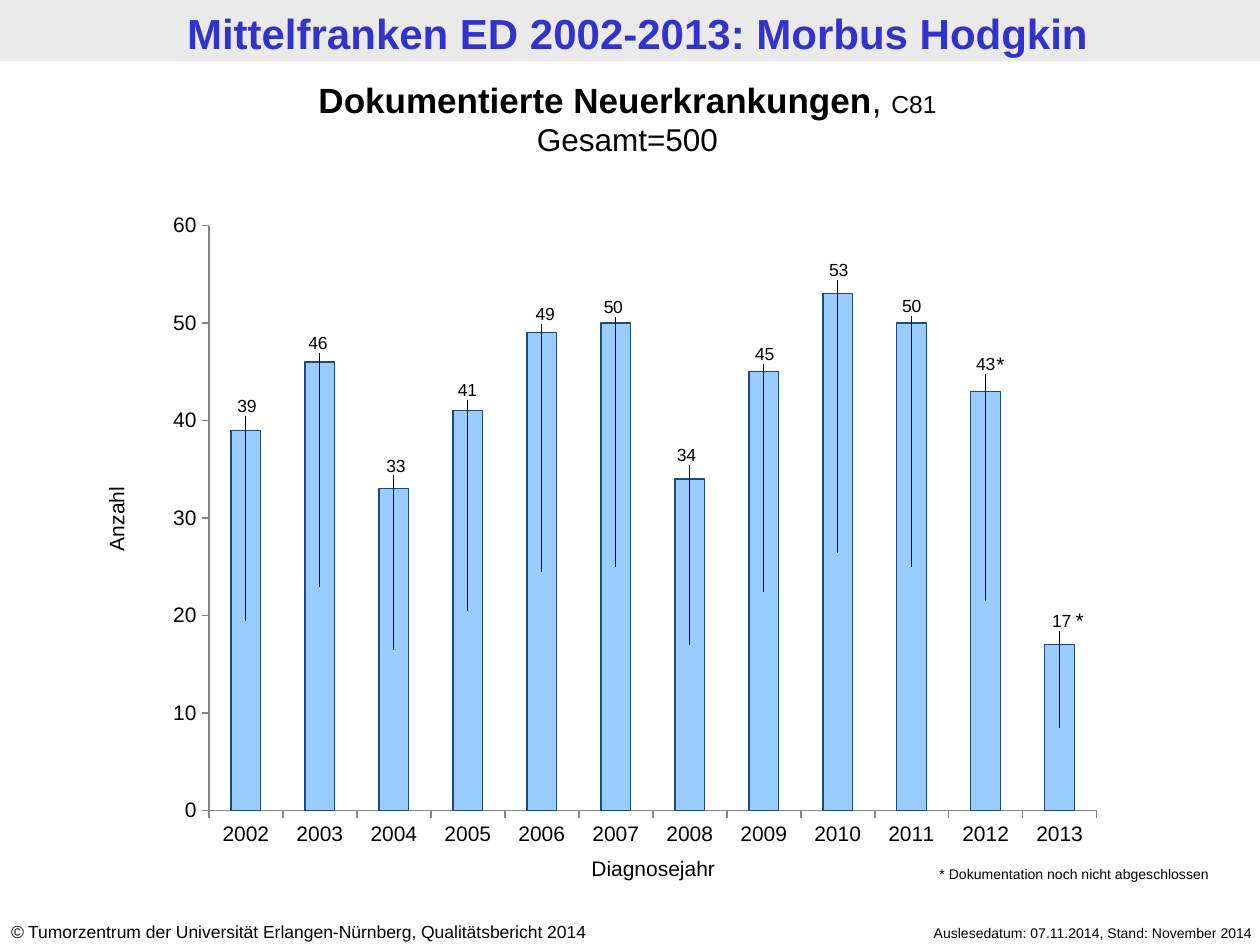
from dataclasses import dataclass

from lxml.etree import SubElement
from pptx import Presentation
from pptx.chart.data import CategoryChartData
from pptx.dml.color import RGBColor
from pptx.enum.chart import XL_CHART_TYPE as ChartType
from pptx.enum.chart import XL_LABEL_POSITION as LabelPosition
from pptx.enum.chart import XL_TICK_MARK as TickMark
from pptx.enum.shapes import MSO_SHAPE as Shape
from pptx.enum.text import MSO_ANCHOR as Anchor
from pptx.enum.text import MSO_AUTO_SIZE as AutoSize
from pptx.enum.text import PP_ALIGN as Align
from pptx.oxml import parse_xml
from pptx.oxml.ns import nsdecls, qn
from pptx.util import Cm, Pt

FONT = "Arial"
COLORS = {
    "band": "EAEAEA",
    "title": "3333CC",
    "text": "000000",
    "bar": "99CCFF",
    "bar_line": "1F497D",
    "axis": "868686",
}


@dataclass
class Caption:
    text: str
    left: float
    top: float
    width: float
    height: float
    size: float
    align: Align = Align.LEFT
    rotation: float = 0


@dataclass
class YearCount:
    year: int
    count: int
    label_shift: float  # cm to the right of the bar centre
    label_lift: float  # cm above the bar top


CAPTIONS = [
    Caption("Auslesedatum: 07.11.2014, Stand: November 2014",
            16.89, 18.52, 8.61, 0.61, 8, Align.RIGHT),
    Caption("Diagnosejahr", 10.31, 17.12, 5.72, 0.76, 12, Align.CENTER),
    Caption("Anzahl", 0.79, 10.08, 3.1, 0.76, 12, Align.CENTER, 270),
    Caption("*", 19.51, 6.96, 0.99, 0.76, 12, Align.RIGHT),
    Caption("*", 21.11, 12.12, 0.99, 0.76, 12, Align.RIGHT),
    Caption("* Dokumentation noch nicht abgeschlossen",
            18.69, 17.32, 6.3, 0.61, 8),
]
COPYRIGHT = Caption("©", -0.03, 18.44, 13.31, 0.69, 10)
HEADING = Caption("Dokumentierte Neuerkrankungen\nGesamt=500",
                  -0.1, 1.45, 25.5, 1.88, 20, Align.CENTER)

YEAR_COUNTS = [
    YearCount(2002, 39, 0.02, 0.48),
    YearCount(2003, 46, -0.04, 0.38),
    YearCount(2004, 33, 0.04, 0.46),
    YearCount(2005, 41, -0.01, 0.4),
    YearCount(2006, 49, 0.07, 0.36),
    YearCount(2007, 50, -0.05, 0.32),
    YearCount(2008, 34, -0.07, 0.48),
    YearCount(2009, 45, 0.02, 0.34),
    YearCount(2010, 53, 0.02, 0.46),
    YearCount(2011, 50, 0, 0.34),
    YearCount(2012, 43, 0, 0.54),
    YearCount(2013, 17, 0.04, 0.46),
]
CHART_WIDTH, CHART_HEIGHT = 19.58, 13.06
PLOT = {"x": 0.066, "y": 0.029, "w": 0.914, "h": 0.903}
AXIS_MAX = 60


def color(name: str) -> RGBColor:
    return RGBColor.from_string(COLORS[name])


def style_font(font, size: float, name: str = "text", bold: bool = False) -> None:
    font.name = FONT
    font.size = Pt(size)
    font.bold = bold
    font.color.rgb = color(name)


def add_caption(slide, caption: Caption):
    box = slide.shapes.add_textbox(Cm(caption.left), Cm(caption.top),
                                   Cm(caption.width), Cm(caption.height))
    box.rotation = caption.rotation
    frame = box.text_frame
    frame.word_wrap = True
    frame.auto_size = AutoSize.SHAPE_TO_FIT_TEXT
    frame.text = caption.text
    for paragraph in frame.paragraphs:
        paragraph.alignment = caption.align
        style_font(paragraph.runs[0].font, caption.size)
    return frame


def append_run(paragraph, text: str, size: float) -> None:
    run = paragraph.add_run()
    run.text = text
    style_font(run.font, size)


def manual_layout(values: dict[str, float], inner: bool = False):
    layout = parse_xml(f"<c:layout {nsdecls('c')}><c:manualLayout/></c:layout>")
    if inner:
        SubElement(layout[0], qn("c:layoutTarget"), val="inner")
        for side in ("xMode", "yMode"):
            SubElement(layout[0], qn(f"c:{side}"), val="edge")
    for key, value in values.items():
        SubElement(layout[0], qn(f"c:{key}"), val=f"{value:.4f}")
    return layout


def add_case_chart(slide) -> None:
    data = CategoryChartData()
    data.categories = [str(entry.year) for entry in YEAR_COUNTS]
    data.add_series("Series 1", [entry.count for entry in YEAR_COUNTS])
    chart = slide.shapes.add_chart(ChartType.COLUMN_STACKED, Cm(2.92), Cm(4.17),
                                   Cm(CHART_WIDTH), Cm(CHART_HEIGHT), data).chart
    chart.has_legend = False
    chart.has_title = False
    style_font(chart.font, 12)

    # Axes
    for axis in (chart.category_axis, chart.value_axis):
        axis.has_major_gridlines = False
        axis.major_tick_mark = TickMark.OUTSIDE
        axis.minor_tick_mark = TickMark.NONE
        axis.format.line.color.rgb = color("axis")
        axis.format.line.width = Pt(1)
    chart.value_axis.minimum_scale = 0
    chart.value_axis.maximum_scale = AXIS_MAX
    chart.value_axis.major_unit = 10

    # Bars
    plot = chart.plots[0]
    plot.gap_width = 150
    plot.overlap = 100
    plot.vary_by_categories = False
    bars = plot.series[0]
    bars.format.fill.solid()
    bars.format.fill.fore_color.rgb = color("bar")
    bars.format.line.color.rgb = color("bar_line")
    bars.format.line.width = Pt(0.75)

    # Value labels, moved from the bar centre to just above the bar
    bars.data_labels.show_value = True
    style_font(bars.data_labels.font, 10)
    for index, entry in enumerate(YEAR_COUNTS):
        label = bars.points[index].data_label
        label.position = LabelPosition.CENTER
        style_font(label.font, 10)
        half_bar = entry.count / AXIS_MAX * PLOT["h"] / 2
        offset = {"x": entry.label_shift / CHART_WIDTH,
                  "y": -half_bar - entry.label_lift / CHART_HEIGHT}
        label_xml = bars._element.xpath(f"c:dLbls/c:dLbl[c:idx/@val='{index}']")[0]
        label_xml.insert(1, manual_layout(offset))

    # Plot area
    plot_area = chart._chartSpace.xpath("c:chart/c:plotArea")[0]
    for old_layout in plot_area.xpath("c:layout"):
        plot_area.remove(old_layout)
    plot_area.insert(0, manual_layout(PLOT, inner=True))


def main() -> None:
    presentation = Presentation()
    presentation.slide_width, presentation.slide_height = Cm(25.4), Cm(19.05)
    slide = presentation.slides.add_slide(presentation.slide_layouts[5])

    # Title on its band
    band = slide.shapes.add_shape(Shape.RECTANGLE, 0, 0, Cm(25.4), Cm(1.24))
    band.shadow.inherit = False
    band.fill.solid()
    band.fill.fore_color.rgb = color("band")
    band.line.fill.background()
    title = slide.shapes.title
    title._element.addprevious(band._element)
    title.left, title.top = Cm(0.15), Cm(0.03)
    title.width, title.height = Cm(25.4), Cm(1.24)
    title_frame = title.text_frame
    title_frame.text = "Mittelfranken ED 2002-2013: Morbus Hodgkin"
    title_frame.vertical_anchor = Anchor.TOP
    title_frame.auto_size = AutoSize.NONE
    title_frame.paragraphs[0].alignment = Align.CENTER
    style_font(title_frame.paragraphs[0].runs[0].font, 24, "title", bold=True)

    add_case_chart(slide)

    # Heading with the total
    topic, total = add_caption(slide, HEADING).paragraphs
    topic.runs[0].font.bold = True
    append_run(topic, ", ", 20)
    append_run(topic, "C81", 14)
    total.runs[0].font.size = Pt(18)

    # Axis names, notes and footer
    for caption in CAPTIONS:
        add_caption(slide, caption)
    copyright_line = add_caption(slide, COPYRIGHT).paragraphs[0]
    copyright_line.runs[0].font.italic = True
    append_run(copyright_line, " Tumorzentrum der Universität Erlangen-Nürnberg, "
               "Qualitätsbericht 2014", 10)

    presentation.save("out.pptx")


if __name__ == "__main__":
    main()
